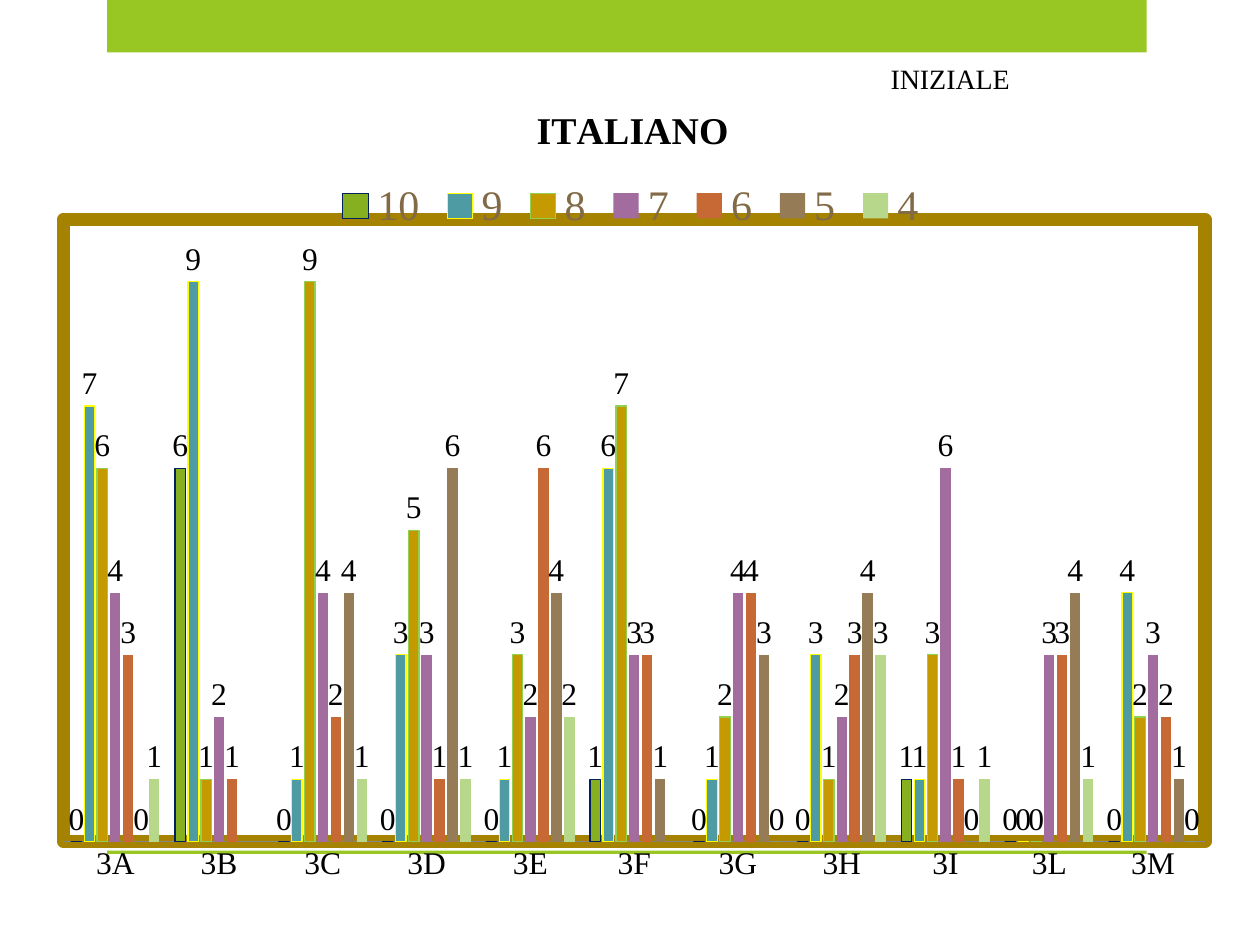
from dataclasses import dataclass
from typing import Optional

import pptx
import pptx.chart.data
import pptx.dml.color
import pptx.enum.chart
import pptx.enum.shapes
import pptx.oxml
import pptx.oxml.ns
import pptx.util

Pt = pptx.util.Pt
RGB = pptx.dml.color.RGBColor.from_string


@dataclass(frozen=True)
class Theme:
    font: str = "Times New Roman"
    text: str = "000000"
    band: str = "98C723"
    legend: str = "826A47"
    frame: str = "A58200"
    axis: str = "868686"
    body_size: float = 18
    note_size: float = 16
    title_size: float = 21.6
    legend_size: float = 24
    frame_width: float = 7.5


@dataclass(frozen=True)
class Box:
    left: float
    top: float
    width: float
    height: float

    def lengths(self) -> tuple:
        return Pt(self.left), Pt(self.top), Pt(self.width), Pt(self.height)


@dataclass(frozen=True)
class Grade:
    name: str
    counts: tuple
    fill: str
    line: Optional[str] = None


THEME = Theme()
CLASSES = ("3A", "3B", "3C", "3D", "3E", "3F", "3G", "3H", "3I", "3L", "3M")
GRADES = (
    Grade("10", (0, 6, 0, 0, 0, 1, 0, 0, 1, 0, 0), "86B01F", "002060"),
    Grade("9", (7, 9, 1, 3, 1, 6, 1, 3, 1, 0, 4), "4E9BA3", "FFFF00"),
    Grade("8", (6, 1, 9, 5, 3, 7, 2, 1, 3, 0, 2), "C49A00", "92D050"),
    Grade("7", (4, 2, 4, 3, 2, 3, 4, 2, 6, 3, 3), "A26C9F"),
    Grade("6", (3, 1, 2, 1, 6, 3, 4, 3, 1, 3, 2), "C76934"),
    Grade("5", (0, None, 4, 6, 4, 1, 3, 4, 0, 4, 1), "957C57"),
    Grade("4", (1, None, 1, 1, 2, None, 0, 3, 1, 1, 0), "B7D78B"),
)


def set_font(font, size: float, color: str, bold: bool = False) -> None:
    font.name = THEME.font
    font.size = Pt(size)
    font.bold = bold
    font.color.rgb = RGB(color)


def add_band(s, box: Box) -> None:
    sp = s.shapes.add_shape(pptx.enum.shapes.MSO_SHAPE.RECTANGLE, *box.lengths())
    sp.shadow.inherit = False
    sp.fill.solid()
    sp.fill.fore_color.rgb = RGB(THEME.band)
    sp.line.fill.background()


def add_note(s, box: Box, text: str) -> None:
    tf = s.shapes.add_textbox(*box.lengths()).text_frame
    tf.word_wrap = True
    r = tf.paragraphs[0].add_run()
    r.text = text
    set_font(r.font, THEME.note_size, THEME.text)


def set_layout(parent, before: tuple, inner: bool = False, **fractions: float) -> None:
    """Place a chart part by fractions of the chart's size."""
    for old in parent.findall(pptx.oxml.ns.qn("c:layout")):
        parent.remove(old)
    modes = "".join(f'<c:{k}Mode val="edge"/>' for k in ("x", "y"))
    values = "".join(f'<c:{k} val="{v}"/>' for k, v in fractions.items())
    target = '<c:layoutTarget val="inner"/>' if inner else ""
    layout = pptx.oxml.parse_xml(
        f'<c:layout {pptx.oxml.ns.nsdecls("c")}><c:manualLayout>'
        f"{target}{modes}{values}</c:manualLayout></c:layout>")
    following = [e for e in parent if e.tag in {pptx.oxml.ns.qn(t) for t in before}]
    following[0].addprevious(layout)


def frame_plot(plot_area) -> None:
    plot_area.append(pptx.oxml.parse_xml(
        f'<c:spPr {pptx.oxml.ns.nsdecls("c", "a")}><a:noFill/>'
        f'<a:ln w="{Pt(THEME.frame_width)}"><a:solidFill>'
        f'<a:srgbClr val="{THEME.frame}"/></a:solidFill><a:round/></a:ln></c:spPr>'))


def style_series(series, grade: Grade) -> None:
    series.invert_if_negative = False
    series.format.fill.solid()
    series.format.fill.fore_color.rgb = RGB(grade.fill)
    if grade.line:
        series.format.line.color.rgb = RGB(grade.line)
        series.format.line.width = Pt(0.75)
    else:
        series.format.line.fill.background()
    labels = series.data_labels
    labels.show_value = True
    labels.position = pptx.enum.chart.XL_LABEL_POSITION.OUTSIDE_END
    set_font(labels.font, THEME.body_size, THEME.text)


def add_grades_chart(s, box: Box) -> None:
    data = pptx.chart.data.CategoryChartData()
    data.categories = CLASSES
    for grade in GRADES:
        data.add_series(grade.name, grade.counts)
    chart = s.shapes.add_chart(
        pptx.enum.chart.XL_CHART_TYPE.COLUMN_CLUSTERED, *box.lengths(), data).chart
    set_font(chart.font, THEME.body_size, THEME.text)

    # Columns
    plot = chart.plots[0]
    plot.vary_by_categories = False
    plot.gap_width = 150
    plot.overlap = -25
    for series, grade in zip(plot.series, GRADES):
        style_series(series, grade)

    # Axes
    none = pptx.enum.chart.XL_TICK_MARK.NONE
    x_axis, y_axis = chart.category_axis, chart.value_axis
    x_axis.major_tick_mark = x_axis.minor_tick_mark = none
    x_axis.format.line.color.rgb = RGB(THEME.axis)
    set_font(x_axis.tick_labels.font, THEME.body_size, THEME.text)
    y_axis.visible = False
    y_axis.has_major_gridlines = False
    y_axis.minimum_scale, y_axis.maximum_scale = 0, 10

    # Title
    chart.has_title = True
    p = chart.chart_title.text_frame.paragraphs[0]
    r = p.add_run()
    r.text = "ITALIANO"
    set_font(r.font, THEME.title_size, THEME.text, bold=True)

    # Legend
    chart.has_legend = True
    chart.legend.position = pptx.enum.chart.XL_LEGEND_POSITION.TOP
    chart.legend.include_in_layout = False
    set_font(chart.legend.font, THEME.legend_size, THEME.legend)

    # Placement inside the chart
    plot_area = plot._element.getparent()
    set_layout(plot_area, ("c:barChart",), inner=True, x=0.025, y=0.185, w=0.967, h=0.747)
    set_layout(chart.chart_title._element, ("c:overlay",), x=0.42, y=0.04)
    set_layout(chart.legend._element, ("c:overlay",), x=0.25, y=0.13)
    frame_plot(plot_area)


def main() -> None:
    prs = pptx.Presentation()
    prs.slide_width, prs.slide_height = Pt(720), Pt(540)
    s = prs.slides.add_slide(prs.slide_layouts[6])

    # Green bands at top and bottom
    add_band(s, Box(61.2, 0, 594, 30))
    add_band(s, Box(61.2, 486, 594, 2))

    # Grades by class
    add_grades_chart(s, Box(19.4, 37.4, 674.6, 475.9))
    add_note(s, Box(501.8, 31.7, 164.2, 26.6), "INIZIALE")

    prs.save("out.pptx")


if __name__ == "__main__":
    main()
